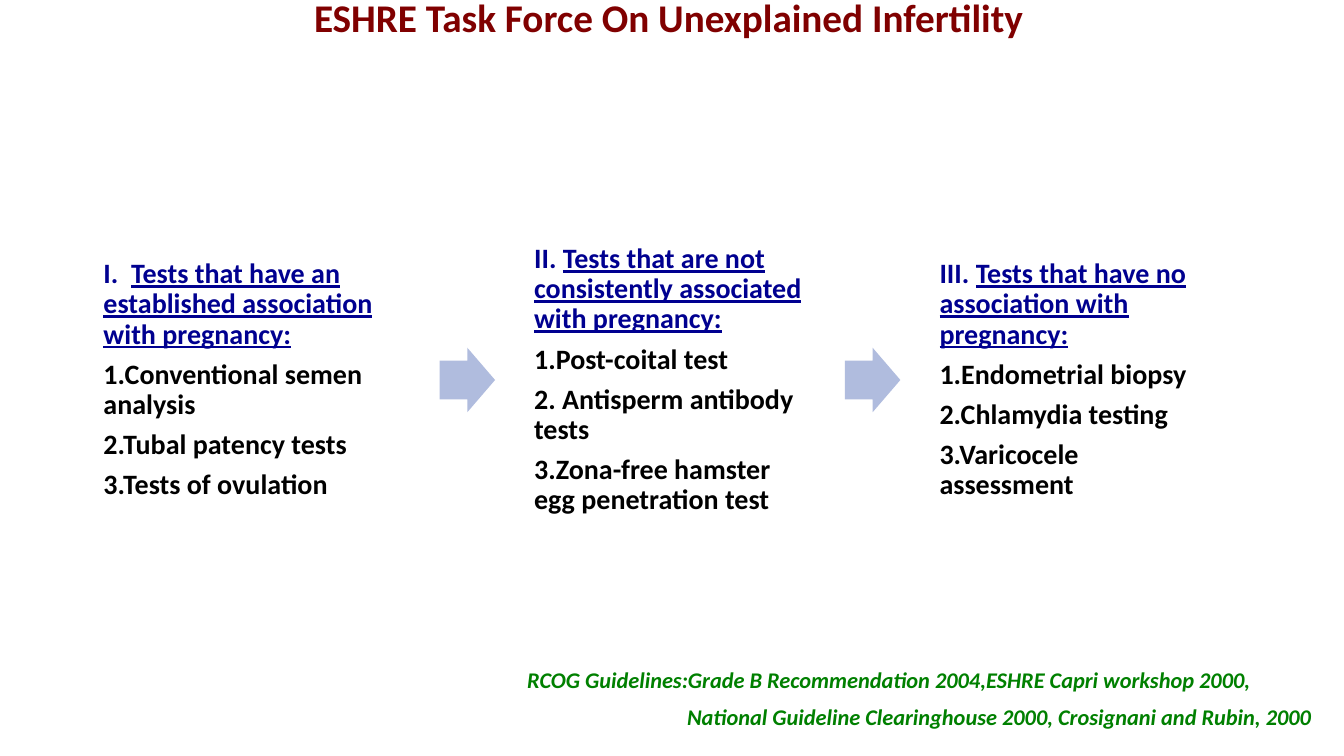
import pptx
import pptx.util
from pptx.dml.color import RGBColor
from pptx.enum.shapes import MSO_SHAPE
from pptx.enum.text import MSO_ANCHOR, PP_ALIGN

Inches, Pt = pptx.util.Inches, pptx.util.Pt

MAROON = RGBColor(0x80, 0x00, 0x00)
NAVY = RGBColor(0x00, 0x00, 0x90)
BLACK = RGBColor(0x00, 0x00, 0x00)
GREEN = RGBColor(0x00, 0x80, 0x00)
WHITE = RGBColor(0xFF, 0xFF, 0xFF)
ARROW_BLUE = RGBColor(0xB0, 0xBC, 0xDE)

TITLE = "ESHRE Task Force On Unexplained Infertility"
# numeral, heading, tests, card width, card height
GROUPS = [
    ("I.  ", "Tests that have an established association with pregnancy:",
     ["1.Conventional semen analysis", "2.Tubal patency tests",
      "3.Tests of ovulation"], 3.24, 2.98),
    ("II. ", "Tests that are not consistently associated with pregnancy:",
     ["1.Post-coital test", "2. Antisperm antibody tests",
      "3.Zona-free hamster egg penetration test"], 2.99, 3.06),
    ("III. ", "Tests that have no association with pregnancy:",
     ["1.Endometrial biopsy", "2.Chlamydia testing",
      "3.Varicocele assessment"], 3.02, 3.15),
]
# text, alignment, left indent
SOURCES = [
    ("RCOG Guidelines:Grade B Recommendation 2004,ESHRE Capri workshop 2000,",
     PP_ALIGN.LEFT, 3.37),
    ("National Guideline Clearinghouse 2000, Crosignani and Rubin, 2000",
     PP_ALIGN.RIGHT, 0),
]

FIRST_CARD_LEFT, MIDDLE = 0.86, 3.77
GAP_BEFORE_ARROW, GAP_AFTER_ARROW = 0.26, 0.22
ARROW_WIDTH, ARROW_HEIGHT = 0.55, 0.64

TITLE_FONT = {"name": "Calibri", "size": Pt(28), "bold": True}
CARD_FONT = {"name": "Calibri", "size": Pt(20), "bold": True}
SOURCE_FONT = {"name": "Calibri", "size": Pt(16), "bold": True, "italic": True}
CARD_PARA = {"alignment": PP_ALIGN.LEFT, "line_spacing": 0.9, "space_after": Pt(7)}
CARD_FRAME = {"word_wrap": True, "vertical_anchor": MSO_ANCHOR.MIDDLE,
              "margin_left": Inches(0.08), "margin_right": Inches(0.08),
              "margin_top": Inches(0.08), "margin_bottom": Inches(0.08)}


def apply(target, values):
    for name, value in values.items():
        setattr(target, name, value)


def add_span(para, text, font, color, underline=False):
    span = para.add_run()
    span.text = text
    apply(span.font, {**font, "underline": underline})
    span.font.color.rgb = color


def paragraphs(frame, count):
    """Return the first paragraph of a frame and as many new ones as needed."""
    return [frame.paragraphs[0]] + [frame.add_paragraph() for _ in range(count - 1)]


def add_plain_shape(page, kind, left, width, height, adjustments, color):
    """Add a filled, unlined shape centred on the middle line."""
    shape = page.shapes.add_shape(kind, Inches(left), Inches(MIDDLE - height / 2),
                                  Inches(width), Inches(height))
    for index, value in enumerate(adjustments):
        shape.adjustments[index] = value
    shape.shadow.inherit = False
    shape.fill.solid()
    shape.fill.fore_color.rgb = color
    shape.line.fill.background()
    return shape


def add_title(page):
    box = page.shapes.add_textbox(Inches(0.86), Inches(-0.06), Inches(11.54), Inches(1.25))
    box.text_frame.word_wrap = True
    para = box.text_frame.paragraphs[0]
    apply(para, {"alignment": PP_ALIGN.CENTER, "line_spacing": 0.9})
    add_span(para, TITLE, TITLE_FONT, MAROON)


def add_groups(page):
    left = FIRST_CARD_LEFT
    for number, (numeral, heading, tests, width, height) in enumerate(GROUPS):
        if number:
            left += GAP_BEFORE_ARROW
            add_plain_shape(page, MSO_SHAPE.RIGHT_ARROW, left, ARROW_WIDTH,
                            ARROW_HEIGHT, (0.6, 0.5), ARROW_BLUE)
            left += ARROW_WIDTH + GAP_AFTER_ARROW
        card = add_plain_shape(page, MSO_SHAPE.ROUNDED_RECTANGLE, left, width,
                               height, (0.1,), WHITE)
        apply(card.text_frame, CARD_FRAME)
        first, *others = paragraphs(card.text_frame, 1 + len(tests))
        add_span(first, numeral, CARD_FONT, NAVY)
        add_span(first, heading, CARD_FONT, NAVY, underline=True)
        for para, test in zip(others, tests):
            add_span(para, test, CARD_FONT, BLACK)
        for para in (first, *others):
            apply(para, CARD_PARA)
        left += width


def add_sources(page):
    box = page.shapes.add_textbox(Inches(1.76), Inches(6.56), Inches(11.35), Inches(0.77))
    box.text_frame.word_wrap = True
    paras = paragraphs(box.text_frame, len(SOURCES))
    for para, (text, alignment, indent) in zip(paras, SOURCES):
        para.alignment = alignment
        para._p.get_or_add_pPr().set("marL", str(Inches(indent)))
        add_span(para, text, SOURCE_FONT, GREEN)
    for para in paras[1:]:
        para.space_before = Pt(7.5)


def main():
    deck = pptx.Presentation()
    deck.slide_width, deck.slide_height = Inches(13.33), Inches(7.5)
    page = deck.slides.add_slide(deck.slide_layouts[6])
    add_title(page)
    add_groups(page)
    add_sources(page)
    deck.save("out.pptx")


if __name__ == "__main__":
    main()
